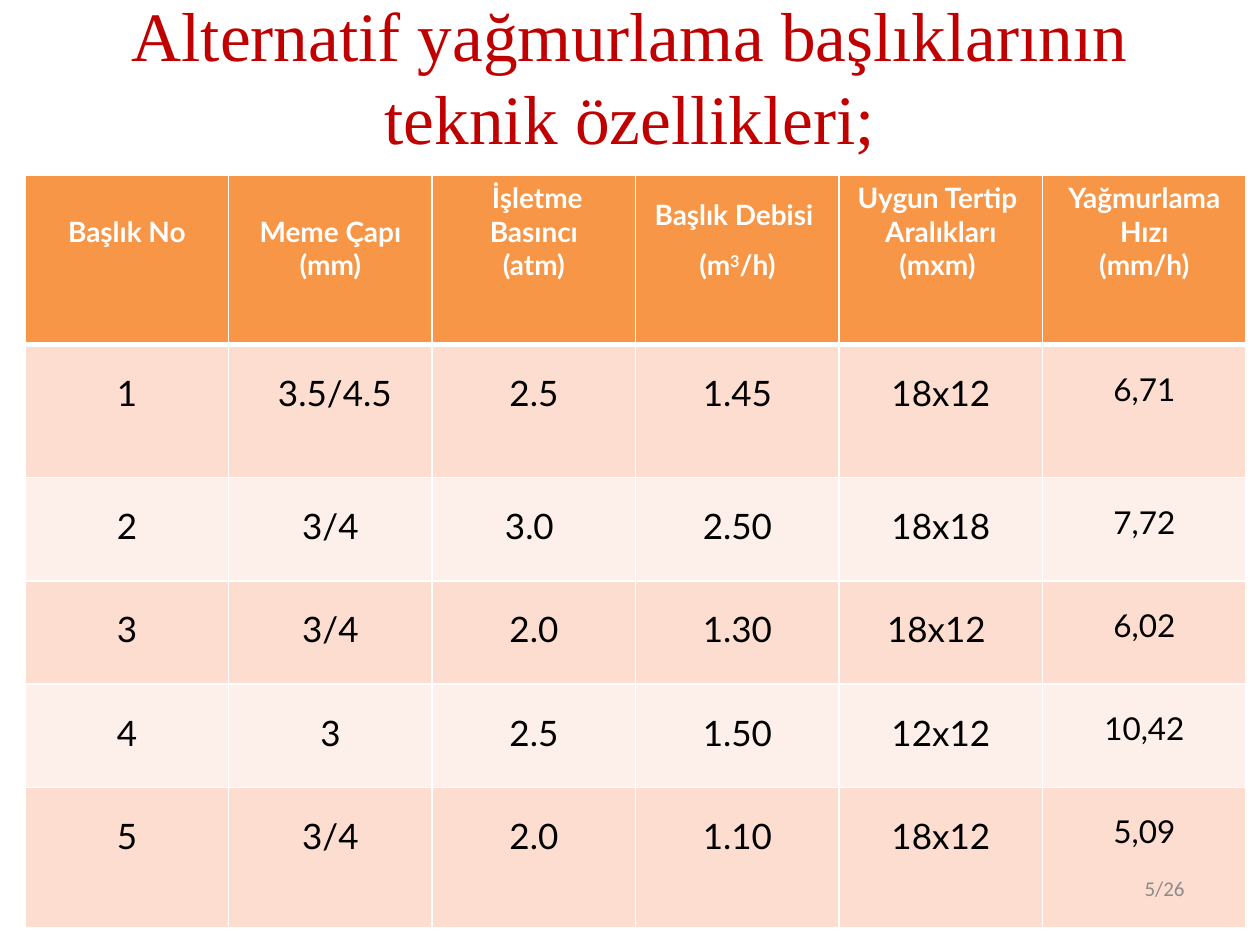
import pptx
import pptx.util
import pptx.dml.color
import pptx.enum.text
import pptx.oxml
import pptx.oxml.ns

Pt = pptx.util.Pt
ALIGN = pptx.enum.text.PP_ALIGN
MIDDLE = pptx.enum.text.MSO_ANCHOR.MIDDLE

HEADERS = [
    (["Başlık No"], [2]),
    (["Meme Çapı", "(mm)"], [2, 1]),
    ([" İşletme Basıncı", "(atm)"], [1, 1]),
    (["Başlık Debisi ", "(m^3^/h)"], [1.5, 1.5]),
    (["Uygun Tertip ", "Aralıkları", "(mxm) "], [1, 1, 1]),
    (["Yağmurlama", "Hızı", "(mm/h)"], [1, 1, 1]),
]
ROWS = [
    ["1", " 3.5/4.5", "2.5", "1.45", "18x12", "6,71"],
    ["2", "3/4", "3.0 ", "2.50", "18x18", "7,72"],
    ["3", "3/4", "2.0", "1.30", "18x12 ", "6,02"],
    ["4", "3", "2.5", "1.50", "12x12", "10,42"],
    ["5", "3/4", "2.0", "1.10", "18x12", "5,09"],
]
ROW_HEIGHTS = [97, 76, 59, 59, 59, 80.5]
COL_WIDTH = 116.28


def rgb(value):
    return pptx.dml.color.RGBColor.from_string(value)


def write(p, text, size=20, font="Lato", color="000000", bold=False,
          align=ALIGN.CENTER, spacing=None):
    p.alignment = align
    if spacing:
        p.line_spacing = float(spacing)
    for i, part in enumerate(text.split("^")):
        r = p.add_run()
        r.text = part
        r.font.size = Pt(size)
        r.font.name = font
        r.font.bold = bold
        r.font.color.rgb = rgb(color)
        if i % 2:
            r.font._element.set("baseline", "30000")


def set_borders(cell, **widths):
    tc_pr = cell._tc.get_or_add_tcPr()
    for i, side in enumerate("LRTB"):
        ln = pptx.oxml.parse_xml(
            f'<a:ln{side} {pptx.oxml.ns.nsdecls("a")} w="{Pt(widths.get(side, 1))}">'
            '<a:solidFill><a:srgbClr val="FFFFFF"/></a:solidFill>'
            f'</a:ln{side}>')
        tc_pr.insert(i, ln)


def fill_cell(cell, color, **widths):
    cell.fill.solid()
    cell.fill.fore_color.rgb = rgb(color)
    set_borders(cell, **widths)


def add_title(s, text):
    sp = s.shapes.title
    sp.left, sp.top, sp.width, sp.height = Pt(36), Pt(21.6), Pt(648), Pt(90)
    tf = sp.text_frame
    tf.vertical_anchor = MIDDLE
    tf.margin_bottom = Pt(51)
    write(tf.paragraphs[0], text, size=39.6, font="Times New Roman", color="C00000")


def add_data_table(s):
    cols = len(HEADERS)
    tbl = s.shapes.add_table(len(ROW_HEIGHTS), cols, Pt(14.4), Pt(100),
                             Pt(COL_WIDTH * cols), Pt(sum(ROW_HEIGHTS))).table
    tbl.horz_banding = False
    for col in tbl.columns:
        col.width = Pt(COL_WIDTH)
    for row, height in zip(tbl.rows, ROW_HEIGHTS):
        row.height = Pt(height)

    for c, (lines, spacings) in enumerate(HEADERS):
        cell = tbl.cell(0, c)
        fill_cell(cell, "F79646", B=3)
        tf = cell.text_frame
        for i, (line, spacing) in enumerate(zip(lines, spacings)):
            p = tf.add_paragraph() if i else tf.paragraphs[0]
            write(p, line, size=16, color="FFFFFF", bold=True, spacing=spacing)

    for r, values in enumerate(ROWS, 1):
        for c, value in enumerate(values):
            cell = tbl.cell(r, c)
            fill_cell(cell, "FCDDCF" if r % 2 else "FDEFE9", T=3 if r == 1 else 1)
            write(cell.text_frame.paragraphs[0], value,
                  size=18 if c == cols - 1 else 20, spacing=1.5)


def add_page_number(s, text):
    tf = s.shapes.add_textbox(Pt(516), Pt(500.5), Pt(168), Pt(28.75)).text_frame
    tf.word_wrap = True
    tf.vertical_anchor = MIDDLE
    tf.margin_bottom = Pt(18)
    write(tf.paragraphs[0], text, size=12, font="Calibri", color="8C8C8C",
          align=ALIGN.RIGHT)


def main():
    prs = pptx.Presentation()
    prs.slide_width, prs.slide_height = Pt(720), Pt(540)
    s = prs.slides.add_slide(prs.slide_layouts[5])
    add_title(s, "Alternatif yağmurlama başlıklarının teknik özellikleri;")
    add_data_table(s)
    add_page_number(s, "5/26")
    prs.save("out.pptx")


if __name__ == "__main__":
    main()
